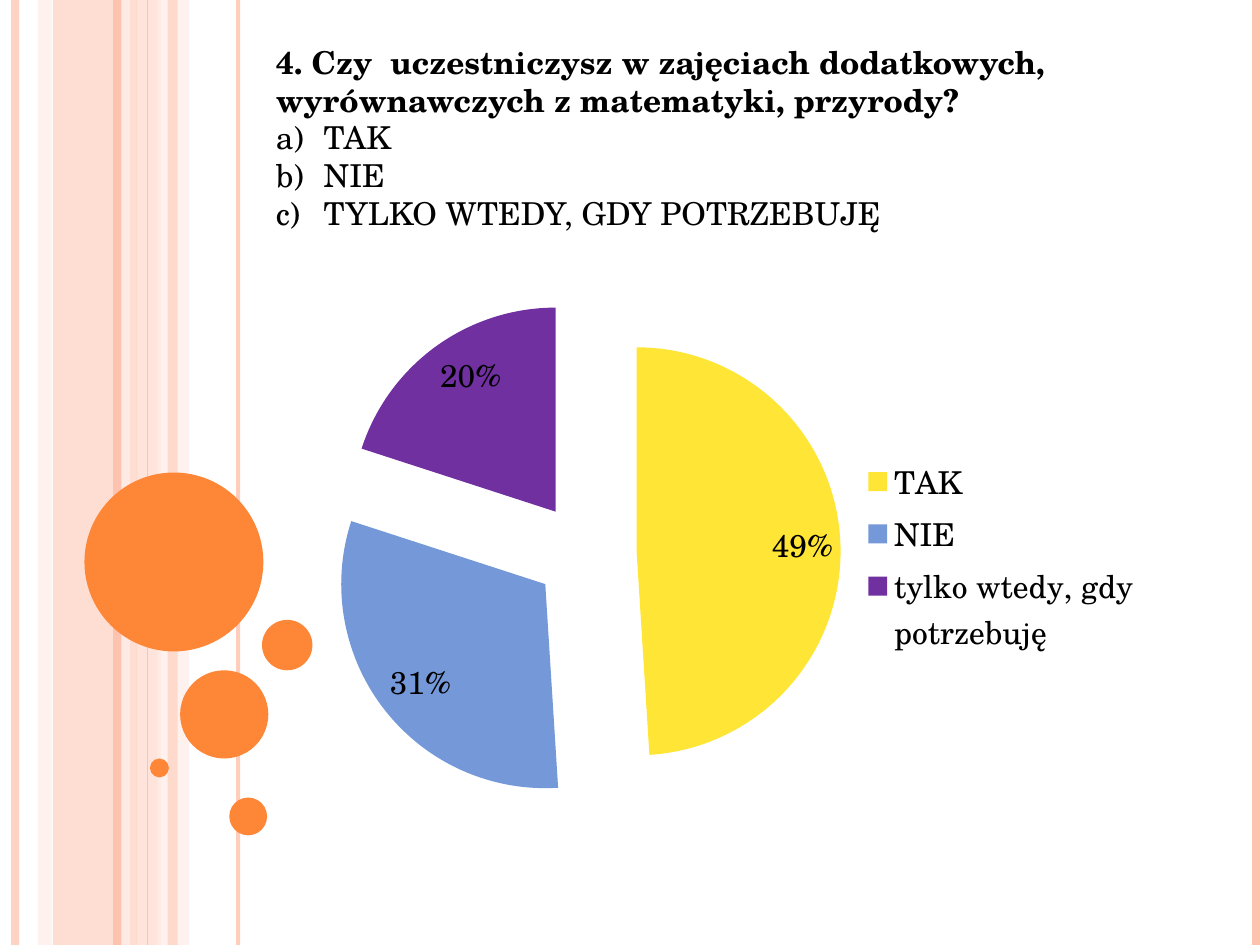
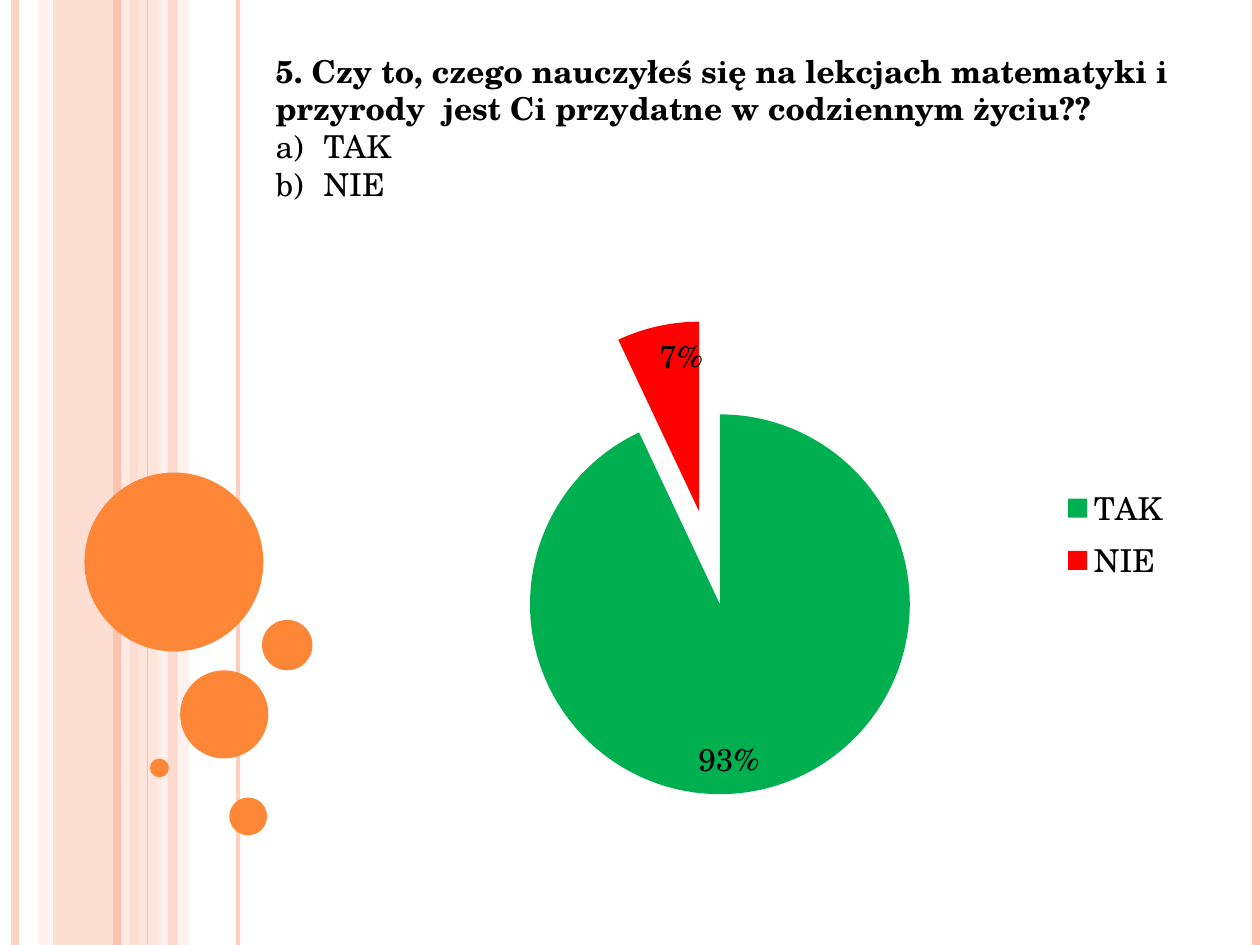
from typing import NamedTuple

from lxml.etree import SubElement
from pptx import Presentation
from pptx.chart.data import CategoryChartData
from pptx.dml.color import RGBColor
from pptx.enum.chart import XL_CHART_TYPE, XL_LABEL_POSITION, XL_LEGEND_POSITION
from pptx.enum.shapes import MSO_CONNECTOR, MSO_SHAPE
from pptx.enum.text import MSO_AUTO_SIZE
from pptx.oxml import parse_xml
from pptx.oxml.ns import nsdecls, qn
from pptx.slide import Slide
from pptx.util import Inches, Pt

# Shared look
FONT = "TeX Gyre Schola"
TEXT_SIZE = Pt(18)
BLACK = RGBColor(0x00, 0x00, 0x00)
SALMON = RGBColor(0xFE, 0xC3, 0xAE)
PEACH = RGBColor(0xFF, 0xD9, 0xCE)
CREAM = RGBColor(0xFF, 0xED, 0xE8)
ORANGE = RGBColor(0xFE, 0x86, 0x37)
YELLOW = RGBColor(0xFF, 0xE6, 0x36)
BLUE = RGBColor(0x75, 0x98, 0xD9)
PURPLE = RGBColor(0x70, 0x30, 0xA0)
GREEN = RGBColor(0x00, 0xB0, 0x50)
RED = RGBColor(0xFF, 0x00, 0x00)

WIDTH, HEIGHT = 10, 7.5
CHART_WIDTH, CHART_HEIGHT = 6.67, 4.44
ANSWER_INDENT = 0.38
EXPLOSION = 25


class Band(NamedTuple):
    left: float
    width: float
    color: RGBColor
    opacity: int


class Stripe(NamedTuple):
    x: float
    points: float
    color: RGBColor
    opacity: int = 100


class Bubble(NamedTuple):
    left: float
    top: float
    diameter: float


class Answer(NamedTuple):
    label: str
    share: float
    color: RGBColor


class Question(NamedTuple):
    text: str
    options: list[str]
    box: tuple[float, float, float, float]
    answers: list[Answer]
    chart_at: tuple[float, float]
    pie_center: tuple[float, float]  # inches inside the chart
    pie_extent: float  # diameter with the slices pulled out


BANDS = [
    Band(0.42, 0.67, SALMON, 54),
    Band(0.3, 0.11, PEACH, 36),
    Band(1.08, 0.2, PEACH, 70),
    Band(1.25, 0.25, CREAM, 71),
    Band(1.33, 0.08, SALMON, 51),
]
STRIPES = [
    Stripe(0.12, 4.5, SALMON, 73),
    Stripe(1, 4.5, CREAM, 83),
    Stripe(0.93, 4.5, SALMON),
    Stripe(1.89, 2.25, SALMON, 82),
    Stripe(1.17, 0.75, SALMON),
    Stripe(9.97, 4.5, SALMON),
]
BUBBLES = [
    Bubble(0.67, 3.75, 1.42),
    Bubble(1.43, 5.32, 0.7),
    Bubble(1.19, 6.02, 0.15),
    Bubble(1.82, 6.33, 0.3),
    Bubble(2.08, 4.92, 0.4),
]
QUESTIONS = [
    Question(
        "4. Czy  uczestniczysz w zajęciach dodatkowych, "
        "wyrównawczych z matematyki, przyrody?",
        ["TAK", "NIE", "TYLKO WTEDY, GDY POTRZEBUJĘ"],
        (2.09, 0.29, 7.48, 1.92),
        [
            Answer("TAK", 0.49, YELLOW),
            Answer("NIE", 0.31, BLUE),
            Answer("tylko wtedy, gdy potrzebuję", 0.2, PURPLE),
        ],
        (2.49, 2.2), (2.16, 2.19), 4.05,
    ),
    Question(
        "5. Czy to, czego nauczyłeś się na lekcjach matematyki i "
        "przyrody  jest Ci przydatne w codziennym życiu??",
        ["TAK", "NIE"],
        (2.09, 0.36, 7.56, 1.62),
        [Answer("TAK", 0.93, GREEN), Answer("NIE", 0.07, RED)],
        (2.72, 2.02), (2.91, 2.41), 3.77,
    ),
]


def set_opacity(properties, opacity: int) -> None:
    """Make the solid colour inside a fill or line translucent."""
    if opacity < 100:
        color = next(properties.iter(qn("a:srgbClr")))
        SubElement(color, qn("a:alpha"), val=str(opacity * 1000))


def add_plain_shape(slide: Slide, kind: MSO_SHAPE, left: float, top: float,
                    width: float, height: float, color: RGBColor,
                    opacity: int = 100) -> None:
    shape = slide.shapes.add_shape(
        kind, Inches(left), Inches(top), Inches(width), Inches(height))
    shape.shadow.inherit = False
    shape.fill.solid()
    shape.fill.fore_color.rgb = color
    set_opacity(shape.fill._xPr, opacity)
    shape.line.fill.background()


def add_stripe(slide: Slide, stripe: Stripe) -> None:
    x = Inches(stripe.x)
    line = slide.shapes.add_connector(
        MSO_CONNECTOR.STRAIGHT, x, 0, x, Inches(HEIGHT))
    line.line.color.rgb = stripe.color
    line.line.width = Pt(stripe.points)
    properties = line._element.spPr
    set_opacity(properties, stripe.opacity)
    SubElement(properties, qn("a:effectLst"))


def add_decoration(slide: Slide) -> None:
    for band in BANDS:
        add_plain_shape(slide, MSO_SHAPE.RECTANGLE, band.left, 0,
                        band.width, HEIGHT, band.color, band.opacity)
    for stripe in STRIPES:
        add_stripe(slide, stripe)
    for bubble in BUBBLES:
        add_plain_shape(slide, MSO_SHAPE.OVAL, bubble.left, bubble.top,
                        bubble.diameter, bubble.diameter, ORANGE)


def style_font(font, bold: bool = False) -> None:
    font.name = FONT
    font.size = TEXT_SIZE
    font.bold = bold
    font.color.rgb = BLACK


def add_question_text(slide: Slide, question: Question) -> None:
    frame = slide.shapes.add_textbox(*map(Inches, question.box)).text_frame
    frame.word_wrap = True
    frame.auto_size = MSO_AUTO_SIZE.SHAPE_TO_FIT_TEXT
    heading = frame.paragraphs[0].add_run()
    heading.text = question.text
    style_font(heading.font, bold=True)

    # Lettered options
    indent = Inches(ANSWER_INDENT)
    for text in question.options:
        paragraph = frame.add_paragraph()
        properties = paragraph._p.get_or_add_pPr()
        properties.set("marL", str(indent))
        properties.set("indent", str(-indent))
        SubElement(properties, qn("a:buFont"), typeface="+mj-lt")
        SubElement(properties, qn("a:buAutoNum"), type="alphaLcParenR")
        option = paragraph.add_run()
        option.text = text
        style_font(option.font)


def place_pie(chart, question: Question) -> None:
    """Fix the plot area, given as fractions of the chart."""
    center_x, center_y = question.pie_center
    extent = question.pie_extent
    fractions = {
        "x": (center_x - extent / 2) / CHART_WIDTH,
        "y": (center_y - extent / 2) / CHART_HEIGHT,
        "w": extent / CHART_WIDTH,
        "h": extent / CHART_HEIGHT,
    }
    plot_area = chart._chartSpace.chart.plotArea
    for old in plot_area.findall(qn("c:layout")):
        plot_area.remove(old)
    modes = '<c:xMode val="edge"/><c:yMode val="edge"/>'
    sizes = "".join(f'<c:{key} val="{value:.3f}"/>'
                    for key, value in fractions.items())
    plot_area.insert(0, parse_xml(
        f'<c:layout {nsdecls("c")}><c:manualLayout>'
        f'<c:layoutTarget val="inner"/>{modes}{sizes}'
        f'</c:manualLayout></c:layout>'))


def add_pie(slide: Slide, question: Question) -> None:
    data = CategoryChartData(number_format="0%")
    data.categories = [answer.label for answer in question.answers]
    data.add_series("Series 1", [answer.share for answer in question.answers])
    left, top = question.chart_at
    chart = slide.shapes.add_chart(
        XL_CHART_TYPE.PIE, Inches(left), Inches(top),
        Inches(CHART_WIDTH), Inches(CHART_HEIGHT), data).chart
    chart.has_title = False
    style_font(chart.font)
    chart.has_legend = True
    chart.legend.position = XL_LEGEND_POSITION.RIGHT
    chart.legend.include_in_layout = False
    place_pie(chart, question)

    # Pulled-out, coloured slices
    pie = chart.plots[0]
    pie.vary_by_categories = True
    series = pie.series[0]
    series._element.find(qn("c:tx")).addnext(
        parse_xml(f'<c:explosion {nsdecls("c")} val="{EXPLOSION}"/>'))
    for index, answer in enumerate(question.answers):
        fill = series.points[index].format.fill
        fill.solid()
        fill.fore_color.rgb = answer.color

    # Share labels
    pie.has_data_labels = True
    labels = pie.data_labels
    labels.show_value = True
    labels.show_percentage = False
    labels.number_format = "0%"
    labels.number_format_is_linked = False
    labels.position = XL_LABEL_POSITION.INSIDE_END
    style_font(labels.font)


def main() -> None:
    presentation = Presentation()
    presentation.slide_width = Inches(WIDTH)
    presentation.slide_height = Inches(HEIGHT)
    blank = presentation.slide_layouts[6]
    for question in QUESTIONS:
        slide = presentation.slides.add_slide(blank)
        add_decoration(slide)
        add_question_text(slide, question)
        add_pie(slide, question)
    presentation.save("out.pptx")


if __name__ == "__main__":
    main()
